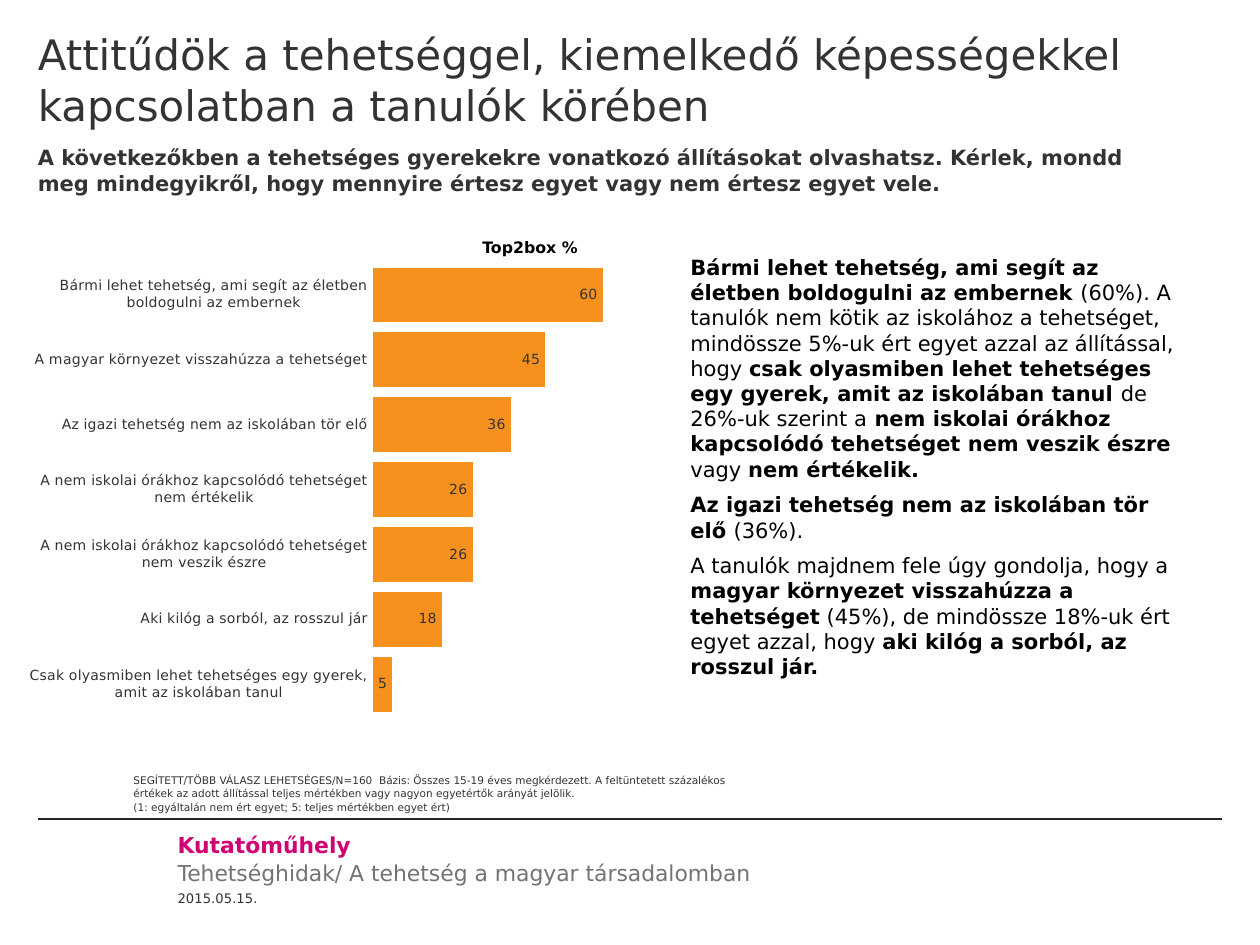
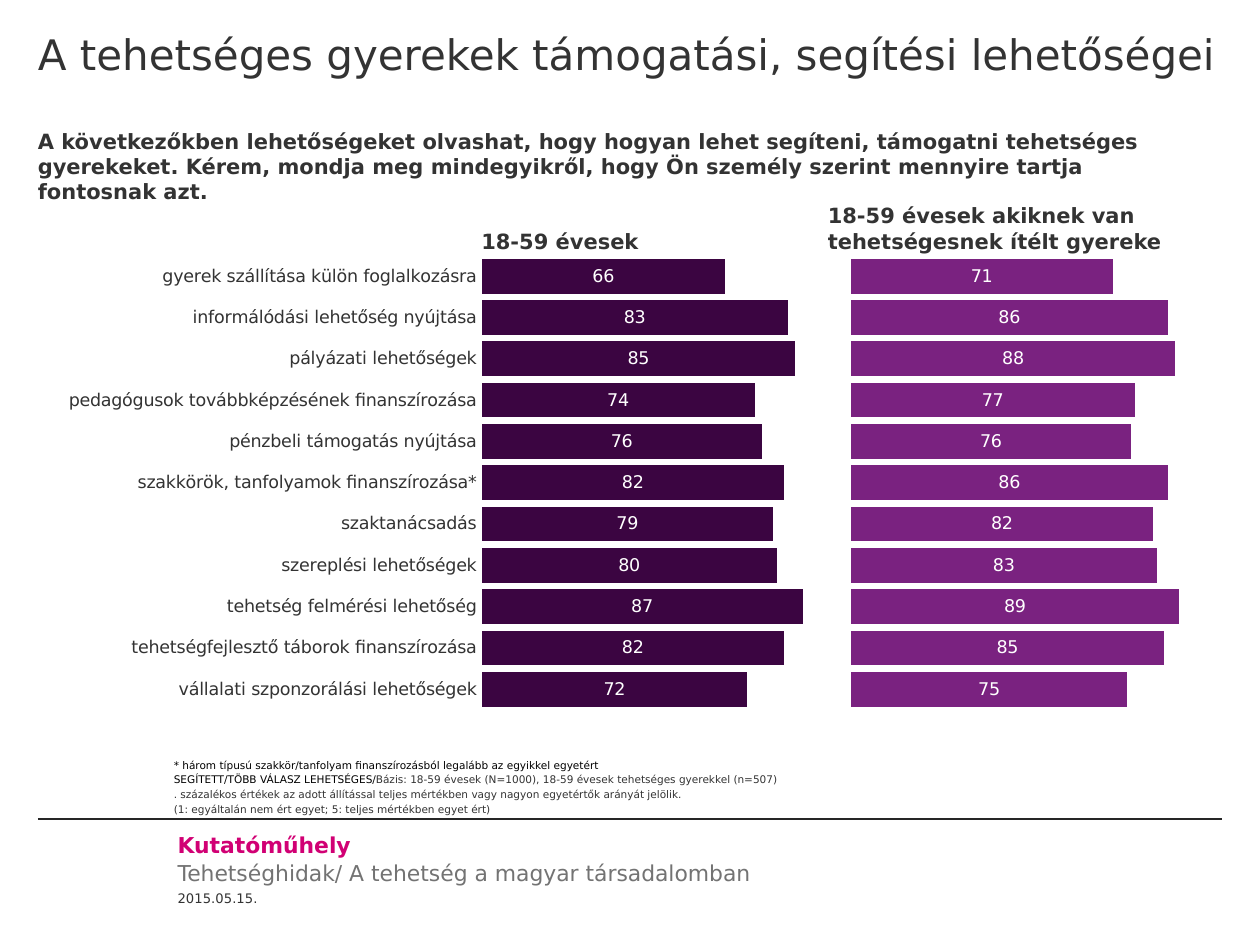
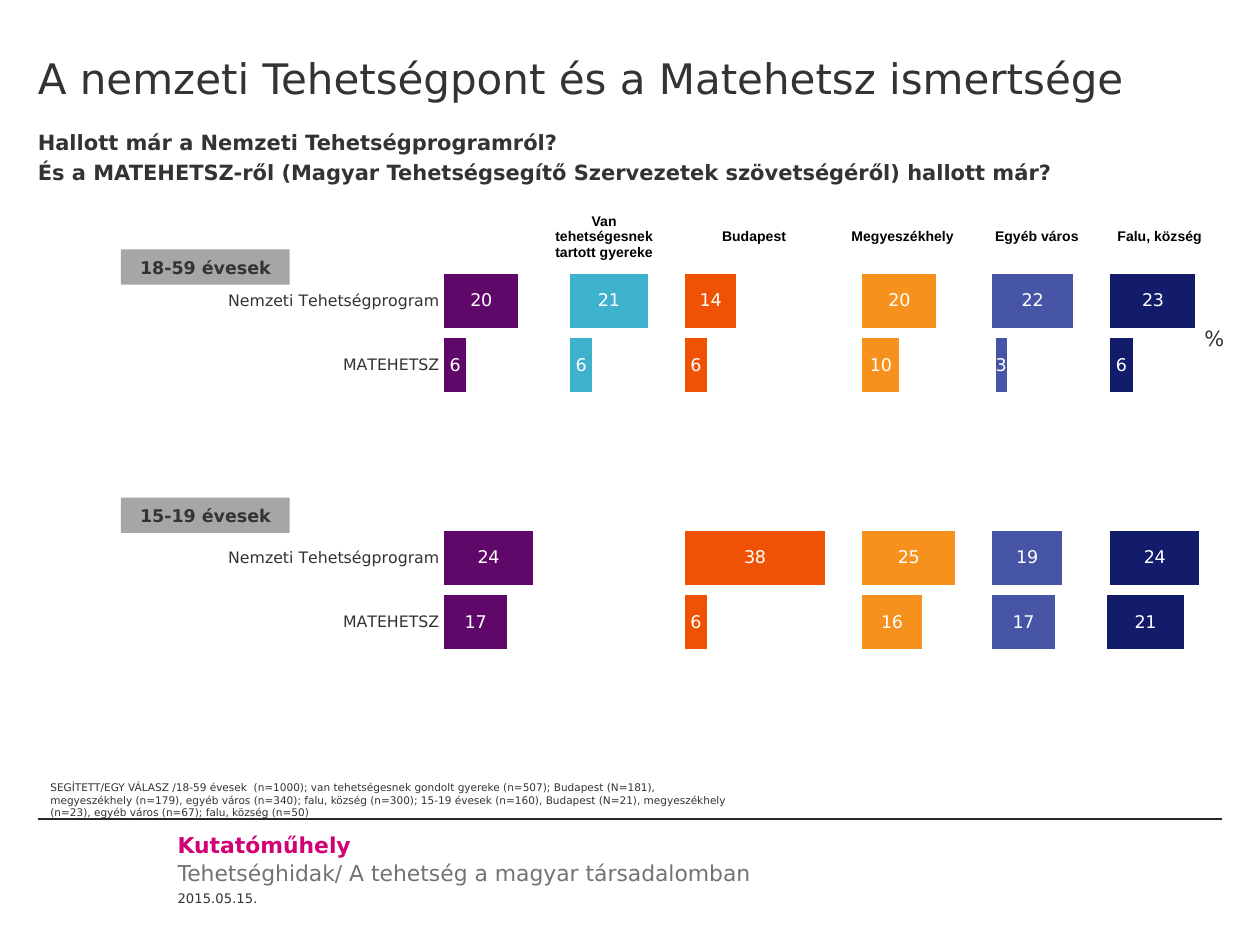
from dataclasses import dataclass, field

from lxml import etree
from pptx import Presentation
from pptx import util as u
from pptx.chart.data import CategoryChartData
from pptx.dml.color import RGBColor
from pptx.enum import chart as charts
from pptx.enum import shapes, text
from pptx.oxml.ns import qn

# The slide is a grid of 100 columns and 75 rows.
SLIDE_WIDTH, SLIDE_HEIGHT = u.Inches(10), u.Inches(7.5)
COLUMN, ROW = SLIDE_WIDTH / 100, SLIDE_HEIGHT / 75


@dataclass(frozen=True)
class Theme:
    font: str = "DejaVu Sans"
    table_font: str = "Arial"
    ink: str = "333333"
    black: str = "000000"
    white: str = "FFFFFF"
    grey: str = "737373"
    rule: str = "262626"
    tag: str = "A6A6A6"
    brand: str = "D10074"
    orange: str = "F7911E"
    aubergine: str = "3B0541"
    purple: str = "7A2280"
    title_size: float = 24
    footer_size: float = 12.5
    body_size: float = 12
    label_size: float = 10
    caption_size: float = 9
    small_size: float = 8
    date_size: float = 7.5
    note_size: float = 6


THEME = Theme()


@dataclass(frozen=True)
class Box:
    """A rectangle in grid columns and rows."""
    left: float
    top: float
    width: float
    height: float

    def lengths(self) -> tuple[int, int, int, int]:
        return (round(self.left * COLUMN), round(self.top * ROW),
                round(self.width * COLUMN), round(self.height * ROW))


@dataclass(frozen=True)
class Style:
    size: float
    colour: str = THEME.ink
    bold: bool = False
    font: str = THEME.font
    gap: float = 0.2  # space between paragraphs, as a share of the size
    align: text.PP_ALIGN = text.PP_ALIGN.LEFT
    anchor: text.MSO_ANCHOR = text.MSO_ANCHOR.TOP
    margins: tuple[float, float, float, float] = (3, 2.3, 3, 0)


@dataclass(frozen=True)
class Run:
    text: str
    bold: bool | None = None
    colour: str | None = None


@dataclass(frozen=True)
class Series:
    values: list[int | None]
    colour: str | None = None  # None leaves an invisible spacer


@dataclass(frozen=True)
class BarChart:
    box: Box
    kind: charts.XL_CHART_TYPE
    categories: list[str]
    series: list[Series]
    plot: tuple[float, float, float, float]
    maximum: int
    size: float = THEME.label_size
    category_size: float = THEME.label_size
    label_colour: str = THEME.white
    label_position: charts.XL_LABEL_POSITION = charts.XL_LABEL_POSITION.CENTER


@dataclass(frozen=True)
class Page:
    title: str
    question: list[list[Run]]
    note: list[list[Run]]
    chart: BarChart
    title_top: float
    question_top: float
    note_box: Box
    texts: list[tuple[Box, list[list[Run]], Style]] = field(default_factory=list)


TITLE = Style(THEME.title_size)
QUESTION = Style(THEME.body_size, bold=True)
NOTE = Style(THEME.note_size, anchor=text.MSO_ANCHOR.BOTTOM, margins=(0, 0, 0, 1.2))
HEADING = Style(THEME.body_size, bold=True, anchor=text.MSO_ANCHOR.BOTTOM,
                margins=(0, 2.3, 3, 0))
COMMENT = Style(THEME.body_size, THEME.black, gap=0.5, margins=(3, 0, 3, 0))
CAPTION = Style(THEME.caption_size, THEME.black, bold=True, margins=(1, 0.5, 1, 0.5))
TAG = Style(THEME.label_size, bold=True, align=text.PP_ALIGN.CENTER,
            anchor=text.MSO_ANCHOR.MIDDLE, margins=(1, 0.5, 1, 0.5))
TABLE_HEAD = Style(THEME.small_size, THEME.black, True, THEME.table_font,
                   align=text.PP_ALIGN.CENTER)
FOOTER_MARGINS = (5.5, 1, 1, 0.5)
BRAND = Style(THEME.footer_size, THEME.brand, True, margins=FOOTER_MARGINS)
PROJECT = Style(THEME.footer_size, THEME.grey, margins=FOOTER_MARGINS)
DATE = Style(THEME.date_size, anchor=text.MSO_ANCHOR.BOTTOM, margins=(0, 0, 0, 0))


def plain(*lines: str) -> list[list[Run]]:
    return [[Run(line)] for line in lines]


def rgb(colour: str) -> RGBColor:
    return RGBColor.from_string(colour)


def write(frame, paragraphs: list[list[Run]], style: Style) -> None:
    for index, runs in enumerate(paragraphs):
        paragraph = frame.add_paragraph() if index else frame.paragraphs[0]
        paragraph.alignment = style.align
        paragraph.space_before = u.Pt(style.size * style.gap if index else 0)
        for piece in runs:
            run = paragraph.add_run()
            run.text = piece.text
            run.font.name = style.font
            run.font.size = u.Pt(style.size)
            run.font.bold = style.bold if piece.bold is None else piece.bold
            run.font.color.rgb = rgb(piece.colour or style.colour)


def fill_text(shape, paragraphs: list[list[Run]], style: Style) -> None:
    frame = shape.text_frame
    frame.word_wrap = True
    frame.auto_size = text.MSO_AUTO_SIZE.NONE
    frame.vertical_anchor = style.anchor
    left, top, right, bottom = style.margins
    frame.margin_left, frame.margin_right = round(left * COLUMN), round(right * COLUMN)
    frame.margin_top, frame.margin_bottom = round(top * ROW), round(bottom * ROW)
    write(frame, paragraphs, style)


def add_text(slide, box: Box, paragraphs: list[list[Run]], style: Style):
    shape = slide.shapes.add_textbox(*box.lengths())
    fill_text(shape, paragraphs, style)
    return shape


def fill_placeholder(shape, box: Box, paragraphs: list[list[Run]], style: Style) -> None:
    shape.left, shape.top, shape.width, shape.height = box.lengths()
    fill_text(shape, paragraphs, style)
    for paragraph in shape.text_frame.paragraphs:
        properties = paragraph._p.get_or_add_pPr()
        properties.set("marL", "0")
        properties.set("indent", "0")
        etree.SubElement(properties, qn("a:buNone"))


def move_footer_to_layout(slide) -> None:
    """Draw the shared footer and hand it to the layout of the slide."""
    line = slide.shapes.add_connector(
        shapes.MSO_CONNECTOR.STRAIGHT, round(3 * COLUMN), round(65 * ROW),
        round(97 * COLUMN), round(65 * ROW))
    line.line.color.rgb = rgb(THEME.rule)
    line.line.width = u.Pt(0.75)
    etree.SubElement(line.element.spPr, qn("a:effectLst"))
    footer = [
        line,
        add_text(slide, Box(8.6, 65, 53.5, 4.1), plain("Kutatóműhely"), BRAND),
        add_text(slide, Box(8.6, 67.2, 53.5, 4.1),
                 plain("Tehetséghidak/ A tehetség a magyar társadalomban"), PROJECT),
        add_text(slide, Box(14.1, 71, 11, 0.9), plain("2015.05.15."), DATE),
    ]
    for number, shape in enumerate(footer, start=100):
        shape.element.xpath(".//p:cNvPr")[0].set("id", str(number))
        slide.slide_layout.shapes.element.append(shape.element)


def set_layout(parent, **shares: float) -> None:
    """Place a chart part by hand, in shares of the chart's size."""
    layout = parent.find(qn("c:layout"))
    if layout is None:
        layout = etree.Element(qn("c:layout"))
        parent.insert(0, layout)
    manual = etree.SubElement(layout, qn("c:manualLayout"))
    if "w" in shares:
        etree.SubElement(manual, qn("c:layoutTarget"), val="inner")
    for mode in ("xMode", "yMode"):
        etree.SubElement(manual, qn(f"c:{mode}"), val="edge")
    for name, share in shares.items():
        etree.SubElement(manual, qn(f"c:{name}"), val=str(share))


def add_bars(slide, spec_chart: BarChart):
    data = CategoryChartData(number_format="0")
    data.categories = spec_chart.categories
    for number, series in enumerate(spec_chart.series, start=1):
        data.add_series(f"Series {number}", series.values)
    chart = slide.shapes.add_chart(spec_chart.kind, *spec_chart.box.lengths(), data).chart
    chart.has_legend = chart.has_title = False
    chart.font.name = THEME.font
    chart.font.size = u.Pt(spec_chart.size)
    chart.font.color.rgb = rgb(THEME.ink)

    background = etree.Element(qn("c:spPr"))
    etree.SubElement(background, qn("a:noFill"))
    etree.SubElement(etree.SubElement(background, qn("a:ln")), qn("a:noFill"))
    chart.element.find(qn("c:chart")).addnext(background)
    set_layout(chart.element.find(".//" + qn("c:plotArea")),
               **dict(zip("xywh", spec_chart.plot)))

    for axis in (chart.category_axis, chart.value_axis):
        axis.has_major_gridlines = False
        axis.major_tick_mark = axis.minor_tick_mark = charts.XL_TICK_MARK.NONE
        axis.format.line.fill.background()
    chart.category_axis.reverse_order = True
    chart.category_axis.tick_labels.font.size = u.Pt(spec_chart.category_size)
    chart.value_axis.tick_label_position = charts.XL_TICK_LABEL_POSITION.NONE
    chart.value_axis.minimum_scale = 0
    chart.value_axis.maximum_scale = spec_chart.maximum

    plot = chart.plots[0]
    plot.gap_width = 19
    plot.vary_by_categories = False
    if spec_chart.kind == charts.XL_CHART_TYPE.BAR_STACKED:
        plot.overlap = 100
    for bars, series in zip(plot.series, spec_chart.series):
        if series.colour is None:
            bars.format.fill.background()
            continue
        bars.format.fill.solid()
        bars.format.fill.fore_color.rgb = rgb(series.colour)
        labels = bars.data_labels
        labels.show_value = True
        labels.number_format, labels.number_format_is_linked = "#,##0", False
        labels.position = spec_chart.label_position
        labels.font.name = THEME.font
        labels.font.size = u.Pt(spec_chart.size)
        labels.font.color.rgb = rgb(spec_chart.label_colour)
    return chart


def add_percent_title(chart) -> None:
    write(chart.chart_title.text_frame, plain("%"), Style(THEME.body_size))
    title = chart.chart_title.element
    set_layout(title, x=0.97, y=0.17)
    title.find(qn("c:overlay")).set("val", "1")


def add_heading_table(slide, box: Box, headings: dict[str, float]) -> None:
    table = slide.shapes.add_table(1, len(headings), *box.lengths()).table
    table.first_row = table.horz_banding = False
    for index, (heading, width) in enumerate(headings.items()):
        table.columns[index].width = round(width * COLUMN)
        cell = table.cell(0, index)
        cell.fill.background()
        cell.vertical_anchor = text.MSO_ANCHOR.MIDDLE
        write(cell.text_frame, plain(heading), TABLE_HEAD)


def add_tag(slide, box: Box, label: str) -> None:
    shape = slide.shapes.add_shape(shapes.MSO_SHAPE.RECTANGLE, *box.lengths())
    shape.shadow.inherit = False
    shape.fill.solid()
    shape.fill.fore_color.rgb = rgb(THEME.tag)
    shape.line.fill.background()
    fill_text(shape, plain(label), TAG)


def add_page(presentation, page: Page):
    slide = presentation.slides.add_slide(presentation.slide_layouts[1])
    fill_placeholder(slide.shapes.title, Box(0, page.title_top, 100, 11.3),
                     plain(page.title), TITLE)
    fill_placeholder(slide.placeholders[1], Box(0, page.question_top, 96.8, 8.3),
                     page.question, QUESTION)
    chart = add_bars(slide, page.chart)
    add_text(slide, page.note_box, page.note, NOTE)
    for box, paragraphs, style in page.texts:
        add_text(slide, box, paragraphs, style)
    return slide, chart


SCALE = "(1: egyáltalán nem ért egyet; 5: teljes mértékben egyet ért)"

ATTITUDES = Page(
    title="Attitűdök a tehetséggel, kiemelkedő képességekkel kapcsolatban a tanulók körében",
    question=plain("A következőkben a tehetséges gyerekekre vonatkozó állításokat olvashatsz. Kérlek, "
                   "mondd meg mindegyikről, hogy mennyire értesz egyet vagy nem értesz egyet vele."),
    note=plain("SEGÍTETT/TÖBB VÁLASZ LEHETSÉGES/N=160  Bázis: Összes 15-19 éves megkérdezett. "
               "A feltüntetett százalékos értékek az adott állítással teljes mértékben vagy "
               "nagyon egyetértők arányát jelölik.", SCALE),
    title_top=0, question_top=9.2, note_box=Box(10.6, 61.8, 47, 4),
    chart=BarChart(
        Box(1.2, 14.4, 51.2, 46.6), charts.XL_CHART_TYPE.BAR_CLUSTERED,
        ["Bármi lehet tehetség, ami segít az életben boldogulni az embernek",
         "A magyar környezet visszahúzza a tehetséget",
         "Az igazi tehetség nem az iskolában tör elő",
         "A nem iskolai órákhoz kapcsolódó tehetséget nem értékelik",
         "A nem iskolai órákhoz kapcsolódó tehetséget nem veszik észre",
         "Aki kilóg a sorból, az rosszul jár",
         "Csak olyasmiben lehet tehetséges egy gyerek, amit az iskolában tanul"],
        [Series([60, 45, 36, 26, 26, 18, 5], THEME.orange)],
        plot=(0.555, 0.138, 0.415, 0.774), maximum=70,
        size=THEME.small_size, category_size=THEME.small_size, label_colour=THEME.ink,
        label_position=charts.XL_LABEL_POSITION.INSIDE_END),
    texts=[
        (Box(37.3, 18.4, 12.7, 2.5), plain("Top2box %"), CAPTION),
        (Box(51.8, 20.2, 45, 28.1), [
            [Run("Bármi lehet tehetség, ami segít az életben boldogulni az embernek ", True),
             Run("(60%). A tanulók nem kötik az iskolához a tehetséget, mindössze 5%-uk ért "
                 "egyet azzal az állítással, hogy "),
             Run("csak olyasmiben lehet tehetséges egy gyerek, amit az iskolában tanul ", True),
             Run("de 26%-uk szerint a"),
             Run(" nem iskolai órákhoz kapcsolódó tehetséget nem veszik észre ", True),
             Run("vagy "), Run("nem értékelik.", True)],
            [Run("Az igazi tehetség nem az iskolában tör elő ", True), Run("(36%).")],
            [Run("A tanulók majdnem fele úgy gondolja, hogy a "),
             Run("magyar környezet visszahúzza a tehetséget", True),
             Run(" (45%), de mindössze 18%-uk ért egyet azzal, hogy "),
             Run("aki kilóg a sorból, az rosszul jár.", True)]], COMMENT)])

ADULTS = [66, 83, 85, 74, 76, 82, 79, 80, 87, 82, 72]
PARENTS = [71, 86, 88, 77, 76, 86, 82, 83, 89, 85, 75]
SUPPORT = Page(
    title="A tehetséges gyerekek támogatási, segítési lehetőségei",
    question=plain("A következőkben lehetőségeket olvashat, hogy hogyan lehet segíteni, támogatni "
                   "tehetséges gyerekeket. Kérem, mondja meg mindegyikről, hogy Ön személy szerint "
                   "mennyire tartja fontosnak azt."),
    note=[[Run("* három típusú szakkör/tanfolyam finanszírozásból legalább az egyikkel egyetért",
               colour=THEME.black)],
          [Run("SEGÍTETT/TÖBB VÁLASZ LEHETSÉGES/", colour=THEME.black),
           Run("Bázis: 18-59 évesek (N=1000), 18-59 évesek tehetséges gyerekkel (n=507)")],
          *plain(". százalékos értékek az adott állítással teljes mértékben vagy nagyon "
                 "egyetértők arányát jelölik.", SCALE)],
    title_top=0, question_top=7.9, note_box=Box(13.8, 61.9, 52, 4),
    chart=BarChart(
        Box(3.1, 11.2, 93.9, 46.6), charts.XL_CHART_TYPE.BAR_STACKED,
        ["gyerek szállítása külön foglalkozásra", "informálódási lehetőség nyújtása",
         "pályázati lehetőségek", "pedagógusok továbbképzésének finanszírozása",
         "pénzbeli támogatás nyújtása", "szakkörök, tanfolyamok finanszírozása*",
         "szaktanácsadás", "szereplési lehetőségek", "tehetség felmérési lehetőség",
         "tehetségfejlesztő táborok finanszírozása", "vállalati szponzorálási lehetőségek"],
        [Series(ADULTS, THEME.aubergine), Series([100 - value for value in ADULTS]),
         Series(PARENTS, THEME.purple)],
        plot=(0.374, 0.195, 0.624, 0.774), maximum=200),
    texts=[(Box(38.2, 14.7, 25.2, 5.4), plain("18-59 évesek"), HEADING),
           (Box(65.7, 14.7, 31.1, 5.4),
            plain("18-59 évesek akiknek van tehetségesnek ítélt gyereke"), HEADING)])

PROGRAMMES = ["Nemzeti Tehetségprogram", "MATEHETSZ"]
NO_BARS = [None, None]
AWARENESS = Page(
    title="A nemzeti Tehetségpont és a Matehetsz ismertsége",
    question=plain("Hallott már a Nemzeti Tehetségprogramról?",
                   "És a MATEHETSZ-ről (Magyar Tehetségsegítő Szervezetek szövetségéről) hallott már?"),
    note=plain("SEGÍTETT/EGY VÁLASZ /18-59 évesek  (n=1000); van tehetségesnek gondolt gyereke (n=507); "
               "Budapest (N=181), megyeszékhely (n=179), egyéb város (n=340); falu, község (n=300); "
               "15-19 évesek (n=160), Budapest (N=21), megyeszékhely (n=23), egyéb város (n=67); "
               "falu, község (n=50)"),
    title_top=1.9, question_top=8, note_box=Box(4, 62.2, 53.9, 4),
    chart=BarChart(
        Box(1.2, 19.7, 97, 33.8), charts.XL_CHART_TYPE.BAR_STACKED,
        [*PROGRAMMES, "", "", *PROGRAMMES],
        [Series([*adults, *NO_BARS, *students], colour) for adults, students, colour in (
            ((20, 6), (24, 17), "60086A"), ((14, 28), (10, 17), None),
            ((21, 6), NO_BARS, "3EB1CC"), ((10, 25), (31, 31), None),
            ((14, 6), (38, 6), "EF5205"), ((34, 42), (10, 42), None),
            ((20, 10), (25, 16), THEME.orange), ((15, 26), (10, 19), None),
            ((22, 3), (19, 17), "4655A5"), ((10, 28), (13, 14), None),
            ((23, 6), (24, 21), "131C6B"))],
        plot=(0.351, 0.048, 0.636, 0.906), maximum=210, category_size=THEME.caption_size))


def main() -> None:
    presentation = Presentation()
    presentation.slide_width, presentation.slide_height = SLIDE_WIDTH, SLIDE_HEIGHT
    first_slide, _ = add_page(presentation, ATTITUDES)
    move_footer_to_layout(first_slide)
    add_page(presentation, SUPPORT)

    slide, chart = add_page(presentation, AWARENESS)
    add_percent_title(chart)
    add_heading_table(slide, Box(42, 16, 55, 5.6), {
        "Van tehetségesnek tartott gyereke": 11.9, "Budapest": 11.9,
        "Megyeszékhely": 11.7, "Egyéb város": 9.6, "Falu, község": 9.9})
    for top, label in ((19.8, "18-59 évesek"), (39.5, "15-19 évesek")):
        add_tag(slide, Box(9.6, top, 13.4, 2.8), label)
    presentation.save("out.pptx")


if __name__ == "__main__":
    main()
